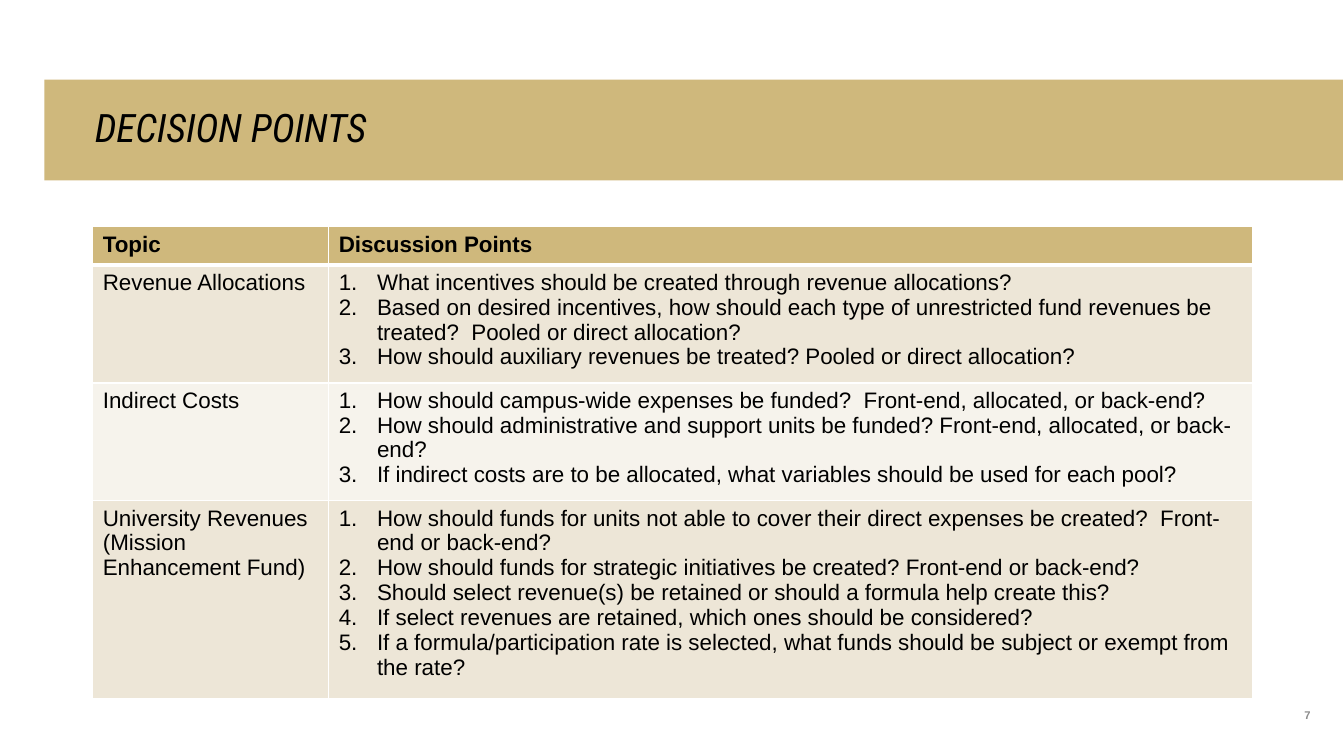
"""Build the decision points slide."""
from lxml.etree import SubElement
from pptx import Presentation
from pptx.dml.color import RGBColor as Rgb
from pptx.enum.text import MSO_ANCHOR as Anchor, MSO_AUTO_SIZE as AutoSize, PP_ALIGN as Align
from pptx.oxml.ns import qn
from pptx.util import Inches, Pt

COLORS = {
    "gold": "CFB87C",
    "sand": "EDE6D7",
    "cream": "F6F3EC",
    "white": "FFFFFF",
    "black": "000000",
    "gray": "8C8C8C",
}
TOPICS = [
    ("Revenue Allocations", 1.17, [
        "What incentives should be created through revenue allocations?",
        "Based on desired incentives, how should each type of unrestricted fund revenues be "
        "treated?  Pooled or direct allocation?",
        "How should auxiliary revenues be treated? Pooled or direct allocation?",
    ]),
    ("Indirect Costs", 1.17, [
        "How should campus-wide expenses be funded?  Front-end, allocated, or back-end?",
        "How should administrative and support units be funded? Front-end, allocated, or back-end?",
        "If indirect costs are to be allocated, what variables should be used for each pool?",
    ]),
    ("University Revenues (Mission Enhancement Fund)", 1.96, [
        "How should funds for units not able to cover their direct expenses be created?  "
        "Front-end or back-end?",
        "How should funds for strategic initiatives be created? Front-end or back-end?",
        "Should select revenue(s) be retained or should a formula help create this?",
        "If select revenues are retained, which ones should be considered?",
        "If a formula/participation rate is selected, what funds should be subject or exempt "
        "from the rate?",
    ]),
]


class SlideBuilder:
    """Hold the text style and the current slide."""

    body_font = "Arial"
    title_font = "Roboto Condensed"
    body_size = 16

    def __init__(self, slide):
        self.slide = slide

    def color(self, name):
        """Return a named colour."""
        return Rgb.from_string(COLORS[name])

    def add_text(self, paragraph, text, size=body_size, font=body_font, color="black",
                 bold=False, italic=False):
        """Add one styled run to a paragraph."""
        run = paragraph.add_run()
        run.text = text
        run.font.name, run.font.size = font, Pt(size)
        run.font.bold, run.font.italic = bold, italic
        run.font.color.rgb = self.color(color)

    def frame(self, shape, anchor, margins):
        """Set the wrapping, anchor and margins of a shape and return its first paragraph."""
        frame = shape.text_frame
        frame.word_wrap, frame.auto_size = True, AutoSize.NONE
        frame.vertical_anchor = anchor
        (frame.margin_left, frame.margin_top,
         frame.margin_right, frame.margin_bottom) = map(Inches, margins)
        return frame.paragraphs[0]

    def title(self, text, left, top, width, height):
        """Turn the title placeholder into a filled band."""
        band = self.slide.shapes.title
        band.left, band.top, band.width, band.height = map(Inches, (left, top, width, height))
        band.fill.solid()
        band.fill.fore_color.rgb = self.color("gold")
        heading = self.frame(band, Anchor.MIDDLE, (0.5, 0.05, 1, 0.05))
        heading.alignment, heading.line_spacing = Align.LEFT, 0.9
        self.add_text(heading, text, 28, self.title_font, italic=True)

    def page_number(self, text, left, top, width, height):
        """Add the page number at the lower right."""
        box = self.slide.shapes.add_textbox(*map(Inches, (left, top, width, height)))
        number = self.frame(box, Anchor.BOTTOM, (0, 0, 0, 0))
        number.alignment = Align.RIGHT
        self.add_text(number, text, 8, color="gray", bold=True)

    def cell(self, cell, lines, fill, top=1, bottom=1, bold=False, numbered=False):
        """Fill one table cell with borders, background and paragraphs."""
        properties = cell._tc.get_or_add_tcPr()
        for side, points in (("L", 1), ("R", 1), ("T", top), ("B", bottom)):
            border = SubElement(properties, qn(f"a:ln{side}"), w=str(Pt(points)))
            solid = SubElement(border, qn("a:solidFill"))
            SubElement(solid, qn("a:srgbClr"), val=COLORS["white"])
        cell.fill.solid()
        cell.fill.fore_color.rgb = self.color(fill)
        for index, line in enumerate(lines):
            frame = cell.text_frame
            paragraph = frame.add_paragraph() if index else frame.paragraphs[0]
            if numbered:
                self.number(paragraph)
            self.add_text(paragraph, line, bold=bold)

    def number(self, paragraph):
        """Give a paragraph a hanging automatic number."""
        indent = Inches(0.38)
        properties = paragraph._p.get_or_add_pPr()
        properties.set("marL", str(indent))
        properties.set("indent", str(-indent))
        SubElement(properties, qn("a:buFont"), typeface="+mj-lt")
        SubElement(properties, qn("a:buAutoNum"), type="arabicPeriod")

    def topic_table(self, headings, topics, left, top, widths, header_height):
        """Add the table of topics and their numbered discussion points."""
        heights = [header_height] + [height for _, height, _ in topics]
        table = self.slide.shapes.add_table(
            len(heights), len(widths),
            *map(Inches, (left, top, sum(widths), sum(heights)))).table
        for column, width in zip(table.columns, widths):
            column.width = Inches(width)
        for row, height in zip(table.rows, heights):
            row.height = Inches(height)
        for column, heading in enumerate(headings):
            self.cell(table.cell(0, column), [heading], "gold", bottom=3, bold=True)
        for row, (topic, _, points) in enumerate(topics, 1):
            fill = "sand" if row % 2 else "cream"
            border = 3 if row == 1 else 1
            self.cell(table.cell(row, 0), [topic], fill, top=border)
            self.cell(table.cell(row, 1), points, fill, top=border, numbered=True)


def main():
    """Build and save the slide."""
    deck = Presentation()
    deck.slide_width, deck.slide_height = Inches(13.33), Inches(7.5)
    builder = SlideBuilder(deck.slides.add_slide(deck.slide_layouts[5]))
    builder.topic_table(("Topic", "Discussion Points"), TOPICS, 0.92, 2.25, (2.34, 9.16), 0.38)
    builder.title("DECISION POINTS", 0.44, 0.79, 12.88, 1)
    builder.page_number("7", 12.15, 6.66, 0.85, 0.5)
    deck.save("out.pptx")


if __name__ == "__main__":
    main()
